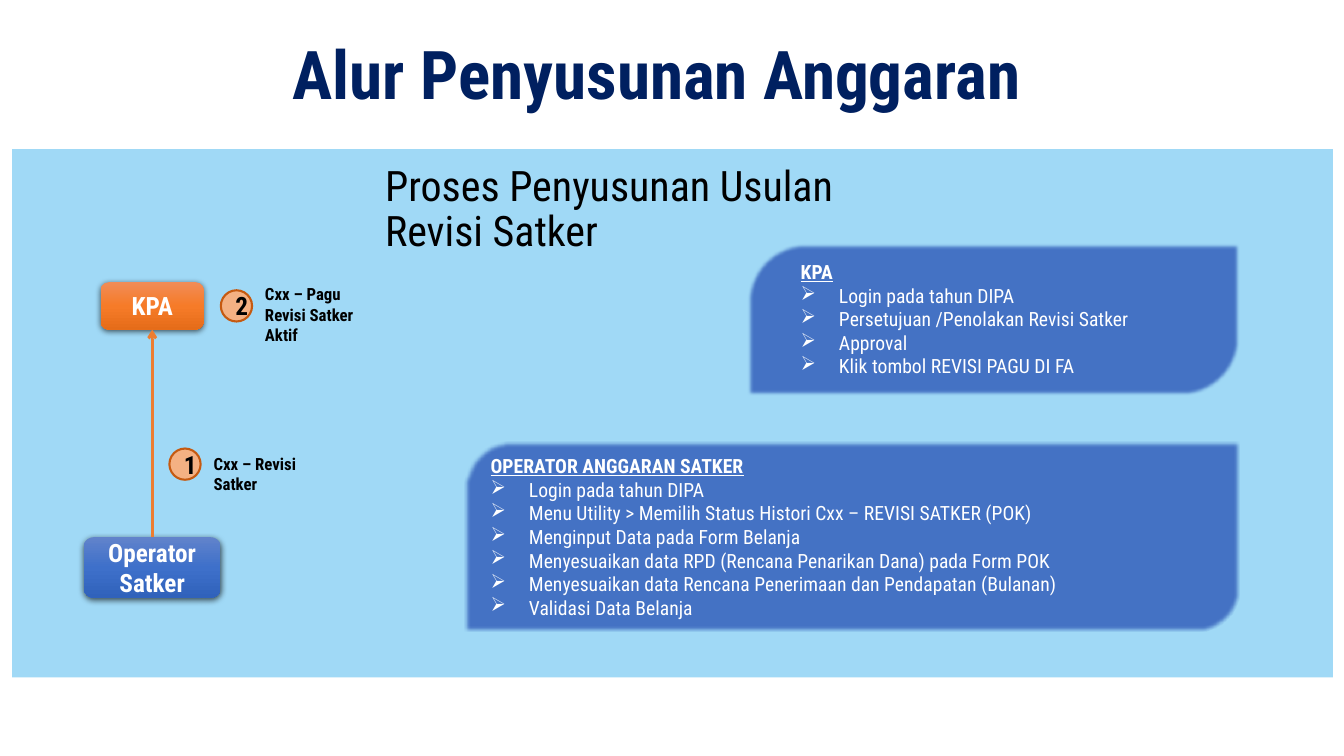
from lxml import etree
from pptx import Presentation
from pptx.dml.color import RGBColor
from pptx.enum import shapes, text
from pptx.oxml import ns
from pptx.util import Inches, Pt

FONT = "Roboto Condensed"
COLORS = {
    "sky": "A0D9F6", "panel": "4472C4", "navy": "002060",
    "black": "000000", "white": "FFFFFF",
    "arrow": "ED7D31", "badge": "F4B183", "badge_line": "C55A11",
}
GRADIENTS = {
    "blue": ["6183CB", "3E70CA", "3062BB"],
    "orange": ["F18C57", "F67B28", "E56C19"],
}


def add_element(parent, tag, **attributes):
    return etree.SubElement(parent, ns.qn(tag), attributes)


def write(shape, content, size, color="black", bold=False, align=None, anchor=text.MSO_ANCHOR.TOP):
    frame = shape.text_frame
    frame.word_wrap = True
    frame.vertical_anchor = anchor
    frame.text = content
    for paragraph in frame.paragraphs:
        paragraph.alignment = align or text.PP_ALIGN.LEFT
        for run in paragraph.runs:
            run.font.name = FONT
            run.font.size = Pt(size)
            run.font.bold = bold
            run.font.color.rgb = RGBColor.from_string(COLORS[color])


presentation = Presentation()
presentation.slide_width = Inches(13.33)
presentation.slide_height = Inches(7.5)
slide = presentation.slides.add_slide(presentation.slide_layouts[6])

# Background band
band = slide.shapes.add_shape(
    shapes.MSO_SHAPE.RECTANGLE, Inches(0.12), Inches(1.48), Inches(13.1), Inches(5.24))
band.shadow.inherit = False
band.fill.solid()
band.fill.fore_color.rgb = RGBColor.from_string(COLORS["sky"])
band.line.fill.background()

# Title, subtitle and step labels
center = text.PP_ALIGN.CENTER
texts = [
    ("Alur Penyusunan Anggaran", (1.78, 0.36, 9.47, 0.98), 48, "navy", True, center, 0.9),
    ("Proses Penyusunan Usulan Revisi Satker", (3.72, 1.59, 5.59, 0.69), 30, "black", False, None, 0.9),
    ("Cxx – Revisi Satker", (2.02, 4.45, 1.44, 0.3), 12, "black", True, None, 1.0),
    ("Cxx – Pagu Revisi Satker Aktif", (2.53, 2.77, 1.24, 0.5), 12, "black", True, None, 1.0),
]
for content, box, size, color, bold, align, spacing in texts:
    label = slide.shapes.add_textbox(*map(Inches, box))
    write(label, content, size, color, bold, align)
    label.text_frame.paragraphs[0].line_spacing = spacing

# Role boxes with gradient and shadow
roles = [
    ("Operator Satker", (0.83, 5.33, 1.36, 0.6), "blue"),
    ("KPA", (1, 2.8, 1.02, 0.47), "orange"),
]
for name, box, gradient in roles:
    role = slide.shapes.add_shape(shapes.MSO_SHAPE.ROUNDED_RECTANGLE, *map(Inches, box))
    role.line.fill.background()
    role.fill.gradient()
    role.fill.gradient_angle = 270
    properties = role.element.spPr
    stops = properties.find(".//" + ns.qn("a:gsLst"))
    for stop in list(stops):
        stops.remove(stop)
    for index, value in enumerate(GRADIENTS[gradient]):
        stop = add_element(stops, "a:gs", pos=str(index * 50000))
        add_element(stop, "a:srgbClr", val=value)
    role.shadow.inherit = False
    shadow = add_element(
        properties.find(ns.qn("a:effectLst")), "a:outerShdw", blurRad=str(Pt(4.5)),
        dist=str(Pt(1.5)), dir="5400000", algn="ctr", rotWithShape="0")
    shade = add_element(shadow, "a:srgbClr", val=COLORS["black"])
    add_element(shade, "a:alpha", val="63000")
    write(role, name, 18, "white", True, center, text.MSO_ANCHOR.MIDDLE)

# Arrow from operator to KPA
arrow = slide.shapes.add_connector(
    shapes.MSO_CONNECTOR.STRAIGHT, Inches(1.51), Inches(5.33), Inches(1.51), Inches(3.27))
arrow.line.color.rgb = RGBColor.from_string(COLORS["arrow"])
arrow.line.width = Pt(2)
add_element(arrow.line._get_or_add_ln(), "a:tailEnd", type="arrow")
add_element(arrow.element.spPr, "a:effectLst")

# Numbered badges
for number, left, top in [("1", 1.68, 4.45), ("2", 2.19, 2.88)]:
    badge = slide.shapes.add_shape(
        shapes.MSO_SHAPE.OVAL, Inches(left), Inches(top), Inches(0.31), Inches(0.31))
    badge.shadow.inherit = False
    badge.fill.solid()
    badge.fill.fore_color.rgb = RGBColor.from_string(COLORS["badge"])
    badge.line.color.rgb = RGBColor.from_string(COLORS["badge_line"])
    badge.line.width = Pt(1.5)
    write(badge, number, 18, "black", True, center, text.MSO_ANCHOR.MIDDLE)

# Task panels with soft edges: heading followed by bullets
panels = [
    ((4.61, 4.38, 7.68, 1.89), 0.229, 0.51, [
        "OPERATOR ANGGARAN SATKER",
        "Login pada tahun DIPA",
        "Menu Utility > Memilih Status Histori Cxx – REVISI SATKER (POK)",
        "Menginput Data pada Form Belanja",
        "Menyesuaikan data RPD (Rencana Penarikan Dana) pada Form POK",
        "Menyesuaikan data Rencana Penerimaan dan Pendapatan (Bulanan)",
        "Validasi Data Belanja",
    ]),
    ((7.41, 2.42, 4.88, 1.5), 0.368, 0.75, [
        "KPA",
        "Login pada tahun DIPA",
        "Persetujuan /Penolakan Revisi Satker",
        "Approval",
        "Klik tombol REVISI PAGU DI FA",
    ]),
]
for box, corner, margin, lines in panels:
    panel = slide.shapes.add_shape(shapes.MSO_SHAPE.ROUND_2_DIAG_RECTANGLE, *map(Inches, box))
    panel.adjustments[0] = corner
    panel.adjustments[1] = 0
    panel.fill.solid()
    panel.fill.fore_color.rgb = RGBColor.from_string(COLORS["panel"])
    panel.line.fill.background()
    panel.shadow.inherit = False
    add_element(panel.element.spPr.find(ns.qn("a:effectLst")), "a:softEdge", rad=str(Pt(2.5)))
    frame = panel.text_frame
    frame.margin_left = frame.margin_top = frame.margin_right = frame.margin_bottom = 0
    write(panel, "\n".join(lines), 14, "white")
    heading, *bullets = frame.paragraphs
    heading.runs[0].font.bold = True
    heading.runs[0].font.underline = True
    for paragraph in frame.paragraphs:
        layout = paragraph._p.get_or_add_pPr()
        layout.set("marL", str(Inches(margin)))
        layout.set("indent", str(Inches(-0.38)))
    for paragraph in bullets:
        add_element(paragraph._p.get_or_add_pPr(), "a:buChar", char="➢")

presentation.save("out.pptx")
